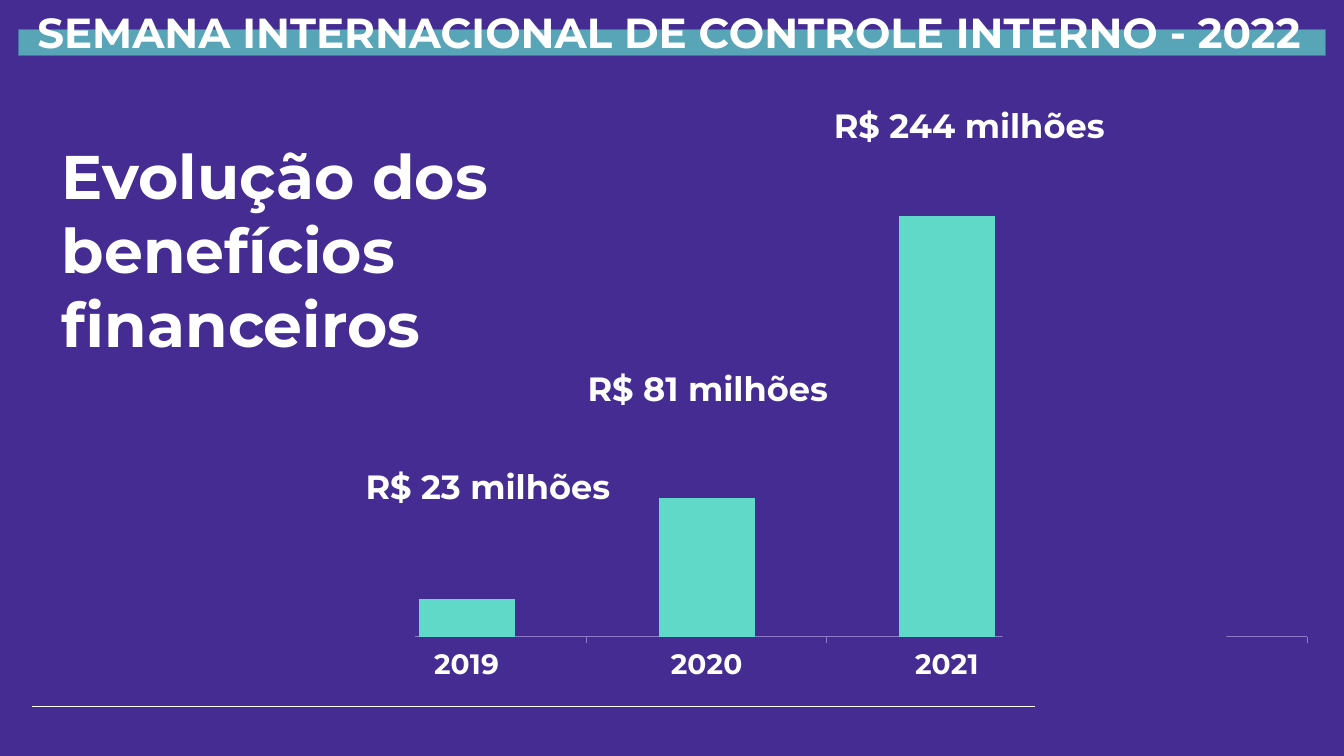
"""Builds the slide on the growth of financial benefits, 2019 to 2021."""
from dataclasses import dataclass

import lxml.etree
import pptx
import pptx.chart.data
import pptx.dml.color
import pptx.enum.chart
import pptx.enum.shapes
import pptx.enum.text
import pptx.oxml
import pptx.oxml.ns
import pptx.util

Cm = pptx.util.Cm
Pt = pptx.util.Pt
qn = pptx.oxml.ns.qn

PURPLE, TURQUOISE, WHITE = "452C92", "61D9C8", "FFFFFF"
HEADING_FONT = "Montserrat"


@dataclass(frozen=True)
class Box:
    left: float
    top: float
    width: float
    height: float

    def emu(self) -> tuple:
        """Return the four lengths as slide units."""
        return Cm(self.left), Cm(self.top), Cm(self.width), Cm(self.height)


@dataclass(frozen=True)
class Caption:
    text: str
    box: Box
    size: int = 24
    centred: bool = True


HEADER = Caption("SEMANA INTERNACIONAL DE CONTROLE INTERNO - 2022",
                 Box(0.69, 0.05, 32.49, 1.55), 30, False)
AMOUNTS = [
    Caption("R$ 23 milhões", Box(8.56, 11.61, 7.47, 1.27)),
    Caption("R$ 81 milhões", Box(14.1, 9.14, 7.47, 1.27)),
    Caption("R$ 244 milhões", Box(20.17, 2.51, 8.51, 1.27)),
]
AXIS_COVERS = [Box(7.34, 15.39, 3.12, 0.99), Box(25.27, 15.54, 5.64, 0.99)]
BENEFITS = {"2019": 9, "2020": 33, "2021": 100, "": None}
PLOT_AREA = {"x": 0.02, "y": 0.04, "w": 0.96, "h": 0.865}


def paint(colour_format, colour: str) -> None:
    """Set a colour format from a hex string."""
    colour_format.rgb = pptx.dml.color.RGBColor.from_string(colour)


def style_font(font, size: int, colour: str = WHITE,
               name: str = HEADING_FONT, bold: bool = True) -> None:
    """Format a font."""
    font.size, font.name, font.bold = Pt(size), name, bold
    paint(font.color, colour)


def fill_solid(fill, colour: str) -> None:
    """Give a fill one colour."""
    fill.solid()
    paint(fill.fore_color, colour)


def add_rectangle(slide, box: Box, colour: str):
    """Draw a flat rectangle without outline."""
    rectangle = slide.shapes.add_shape(
        pptx.enum.shapes.MSO_SHAPE.RECTANGLE, *box.emu())
    rectangle.shadow.inherit = False
    fill_solid(rectangle.fill, colour)
    rectangle.line.fill.background()
    return rectangle


def add_band(slide) -> None:
    """Draw the translucent band behind the header."""
    band = add_rectangle(slide, Box(0.46, 0.74, 32.94, 0.66), TURQUOISE)
    colour = band.fill._xPr.find(qn("a:solidFill"))[0]
    lxml.etree.SubElement(colour, qn("a:alpha"), val="70000")
    fill_solid(band.line.fill, "43739E")
    band.line.width = Pt(0)


def add_footer_rule(slide) -> None:
    """Draw the thin line at the foot."""
    rule = slide.shapes.add_connector(
        pptx.enum.shapes.MSO_CONNECTOR.STRAIGHT,
        Cm(0.81), Cm(17.81), Cm(26.09), Cm(17.81))
    paint(rule.line.color, WHITE)
    rule.line.width = Pt(0.75)
    lxml.etree.SubElement(rule._element.spPr, qn("a:effectLst"))


def add_caption(slide, caption: Caption) -> None:
    """Write one line of bold text."""
    frame = slide.shapes.add_textbox(*caption.box.emu()).text_frame
    frame.word_wrap = True
    frame.text = caption.text
    paragraph = frame.paragraphs[0]
    if caption.centred:
        paragraph.alignment = pptx.enum.text.PP_ALIGN.CENTER
    style_font(paragraph.runs[0].font, caption.size)


def write_title(slide) -> None:
    """Place and format the slide title."""
    title = slide.shapes.title
    title.left, title.top, title.width, title.height = Box(
        1.3, 3.35, 12.01, 5.89).emu()
    frame = title.text_frame
    frame.text = "Evolução dos\nbenefícios\nfinanceiros"
    frame.word_wrap = True
    frame.auto_size = pptx.enum.text.MSO_AUTO_SIZE.NONE
    frame.vertical_anchor = pptx.enum.text.MSO_ANCHOR.TOP
    for paragraph in frame.paragraphs:
        paragraph.alignment = pptx.enum.text.PP_ALIGN.LEFT
        style_font(paragraph.runs[0].font, 44)


def add_benefits_chart(slide) -> None:
    """Draw the columns of yearly benefits."""
    data = pptx.chart.data.CategoryChartData()
    data.categories = list(BENEFITS)
    data.add_series("Series 1", list(BENEFITS.values()))
    chart = slide.shapes.add_chart(
        pptx.enum.chart.XL_CHART_TYPE.COLUMN_STACKED,
        *Box(8.23, 2.74, 25.22, 14.71).emu(), data).chart
    chart.has_title = chart.has_legend = False
    style_font(chart.font, 18, "000000", "Open Sans", False)

    columns = chart.plots[0]
    columns.gap_width, columns.overlap = 150, 100
    columns.vary_by_categories = False
    benefits = columns.series[0]
    fill_solid(benefits.format.fill, "A5A5A5")
    for index, value in enumerate(BENEFITS.values()):
        if value is not None:
            fill_solid(benefits.points[index].format.fill, TURQUOISE)

    amounts = chart.value_axis
    amounts.visible = amounts.has_major_gridlines = False
    amounts.minimum_scale, amounts.maximum_scale = 0, 120
    years = chart.category_axis
    years.major_tick_mark = pptx.enum.chart.XL_TICK_MARK.OUTSIDE
    paint(years.format.line.color, "8B7BC8")
    years.format.line.width = Pt(0.75)
    style_font(years.tick_labels.font, 20)

    plot_area = chart._chartSpace.chart.plotArea
    for existing in plot_area.findall(qn("c:layout")):
        plot_area.remove(existing)
    modes = '<c:xMode val="edge"/><c:yMode val="edge"/>'
    sizes = "".join(f'<c:{key} val="{share}"/>'
                    for key, share in PLOT_AREA.items())
    plot_area.insert(0, pptx.oxml.parse_xml(
        f'<c:layout {pptx.oxml.ns.nsdecls("c")}><c:manualLayout>'
        f'<c:layoutTarget val="inner"/>{modes}{sizes}'
        '</c:manualLayout></c:layout>'))


def main() -> None:
    """Build and save the presentation."""
    presentation = pptx.Presentation()
    presentation.slide_width, presentation.slide_height = Cm(33.87), Cm(19.05)
    slide = presentation.slides.add_slide(presentation.slide_layouts[5])
    fill_solid(slide.background.fill, PURPLE)
    add_band(slide)
    add_footer_rule(slide)
    add_caption(slide, HEADER)
    write_title(slide)
    add_benefits_chart(slide)
    for amount in AMOUNTS:
        add_caption(slide, amount)
    for cover in AXIS_COVERS:
        add_rectangle(slide, cover, PURPLE)
    presentation.save("out.pptx")


if __name__ == "__main__":
    main()
